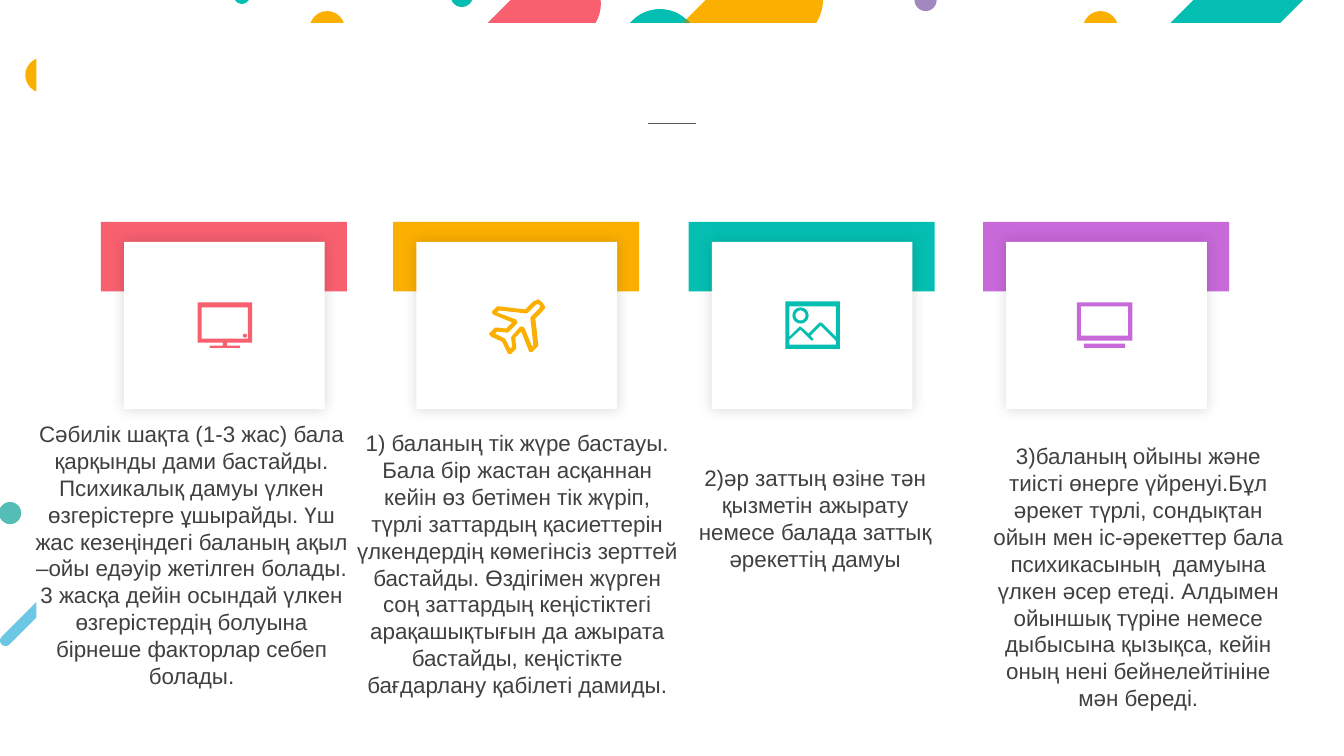
import math

import pptx
import pptx.dml.color
import pptx.enum.shapes
import pptx.enum.text
import pptx.oxml
import pptx.oxml.ns
import pptx.util

Inches = pptx.util.Inches
SHAPES = pptx.enum.shapes.MSO_SHAPE

RED, ORANGE, TEAL, VIOLET = "F86070", "FBAF01", "04BFB1", "C769D8"
WHITE = "FFFFFF"
TEXT_FORMAT = {"name": "Arial", "size": pptx.util.Pt(16)}

# centre x, centre y, overall span, thickness, colour
CAPSULES = [
    (5.98, 1.04, 1.9, 0.77, TEAL),
    (12.38, 0, 1.9, 0.77, TEAL),
    (5.01, 0.6, 1.9, 0.77, RED),
    (6.67, 1, 2.99, 0.95, ORANGE),
    (0.74, 5.67, 1.48, 0.11, "6CC7E5"),
]
OVERLAP = [(6.81, 0.19), (6.6, 0.4), (6.9, 0.4), (6.85, 0.23)]
# left, top, diameter, colour
DOTS = [
    (9.07, -0.11, 0.22, "A188BE"),
    (4.47, -0.15, 0.22, TEAL),
    (-0.01, 4.98, 0.22, "54BDB5"),
    (3.07, 0.11, 0.35, ORANGE),
    (0.25, 0.57, 0.35, ORANGE),
    (10.74, 0.11, 0.35, ORANGE),
    (2.32, -0.12, 0.16, TEAL),
]


def rectangle(left, top, width, height):
    right, bottom = left + width, top + height
    return [(left, top), (right, top), (right, bottom), (left, bottom)]


def circle(x, y, radius, steps=24):
    angles = [2 * math.pi * step / steps for step in range(steps)]
    return [(x + radius * math.cos(a), y + radius * math.sin(a)) for a in angles]


# Each icon is a list of closed contours in inches; an inner contour is a hole.
MONITOR = [
    rectangle(0.01, 0.06, 0.54, 0.4), rectangle(0.05, 0.11, 0.46, 0.31),
    circle(0.48, 0.39, 0.02), rectangle(0.26, 0.46, 0.04, 0.03),
    rectangle(0.13, 0.49, 0.3, 0.02),
]
PLANE = [
    [(0.44, 0.05), (0.49, 0.03), (0.53, 0.06), (0.56, 0.11), (0.53, 0.15),
     (0.46, 0.22), (0.49, 0.49), (0.48, 0.5), (0.43, 0.55), (0.4, 0.55),
     (0.32, 0.35), (0.26, 0.41), (0.27, 0.5), (0.27, 0.52), (0.22, 0.57),
     (0.19, 0.57), (0.13, 0.45), (0.02, 0.4), (0, 0.37), (0.01, 0.36),
     (0.06, 0.31), (0.08, 0.31), (0.17, 0.32), (0.23, 0.26), (0.04, 0.18),
     (0.03, 0.16), (0.03, 0.15), (0.08, 0.1), (0.1, 0.1), (0.36, 0.13)],
    [(0.47, 0.08), (0.39, 0.16), (0.37, 0.17), (0.1, 0.14), (0.08, 0.16),
     (0.27, 0.23), (0.28, 0.25), (0.28, 0.27), (0.19, 0.36), (0.18, 0.36),
     (0.08, 0.35), (0.06, 0.37), (0.16, 0.42), (0.21, 0.52), (0.23, 0.5),
     (0.22, 0.41), (0.23, 0.39), (0.31, 0.3), (0.33, 0.3), (0.35, 0.31),
     (0.43, 0.5), (0.44, 0.48), (0.41, 0.21), (0.42, 0.2), (0.5, 0.12),
     (0.51, 0.09), (0.49, 0.08)],
]
LANDSCAPE = [
    rectangle(0.01, 0.05, 0.54, 0.47),
    [(0.05, 0.48), (0.05, 0.43), (0.16, 0.33), (0.27, 0.44), (0.29, 0.43),
     (0.26, 0.39), (0.36, 0.29), (0.51, 0.44), (0.51, 0.48)],
    [(0.51, 0.4), (0.37, 0.26), (0.35, 0.26), (0.24, 0.37), (0.16, 0.3),
     (0.15, 0.3), (0.05, 0.4), (0.05, 0.1), (0.51, 0.1)],
    circle(0.16, 0.19, 0.08), circle(0.16, 0.19, 0.05),
]
LAPTOP = [
    rectangle(-0.02, 0.06, 0.55, 0.38), rectangle(0.02, 0.1, 0.47, 0.29),
    rectangle(0.05, 0.47, 0.41, 0.04),
]

# left, colour, icon, text box, text
CARDS = [
    (1, RED, MONITOR, (0.25, 4.12, 3.3, 2.79),
     "Сәбилік шақта (1-3 жас) бала қарқынды дами бастайды. Психикалық дамуы үлкен "
     "өзгерістерге ұшырайды. Үш жас кезеңіндегі баланың ақыл –ойы едәуір жетілген "
     "болады. 3 жасқа дейін осындай үлкен өзгерістердің болуына бірнеше факторлар "
     "себеп болады."),
    (3.9, ORANGE, PLANE, (3.44, 4.21, 3.38, 2.79),
     "1) баланың тік жүре бастауы. Бала бір жастан асқаннан кейін өз бетімен тік "
     "жүріп, түрлі заттардың қасиеттерін үлкендердің көмегінсіз зерттей бастайды. "
     "Өздігімен жүрген соң заттардың кеңістіктегі арақашықтығын да ажырата "
     "бастайды, кеңістікте бағдарлану қабілеті дамиды."),
    (6.83, TEAL, LANDSCAPE, (6.76, 4.56, 2.65, 1.18),
     "2)әр заттың өзіне тән қызметін ажырату немесе балада заттық әрекеттің дамуы"),
    (9.75, VIOLET, LAPTOP, (9.75, 4.34, 3.08, 2.79),
     "3)баланың ойыны және тиісті өнерге үйренуі.Бұл әрекет түрлі, сондықтан ойын "
     "мен іс-әрекеттер бала психикасының  дамуына үлкен әсер етеді. Алдымен ойыншық "
     "түріне немесе дыбысына қызықса, кейін оның нені бейнелейтініне мән береді."),
]


def color(hex_text):
    return pptx.dml.color.RGBColor.from_string(hex_text)


def paint(shape, fill):
    shape.shadow.inherit = False
    shape.fill.solid()
    shape.fill.fore_color.rgb = color(fill)
    shape.line.fill.background()
    return shape


def add_preset(page, kind, box, fill):
    return paint(page.shapes.add_shape(kind, *map(Inches, box)), fill)


def add_outline(page, contours, left, top, fill):
    """Draw closed contours, given in inches, as one shape from left and top."""
    contours = [[(round(x * 1000), round(y * 1000)) for x, y in contour]
                for contour in contours]
    builder = page.shapes.build_freeform(*contours[0][0], scale=Inches(1) / 1000)
    for index, contour in enumerate(contours):
        if index:
            builder.move_to(*contour[0])
        builder.add_line_segments(contour[1:], close=True)
    return paint(builder.convert_to_shape(Inches(left), Inches(top)), fill)


def add_capsule(page, x, y, span, thickness, fill):
    """Place a rounded bar rising to the right at 45 degrees."""
    length = (span - thickness) * math.sqrt(2) + thickness
    box = (x - length / 2, y - thickness / 2, length, thickness)
    bar = add_preset(page, SHAPES.ROUNDED_RECTANGLE, box, fill)
    bar.adjustments[0] = 0.5
    bar.rotation = -45


def add_soft_shadow(shape):
    effects = shape._element.spPr.find(pptx.oxml.ns.qn("a:effectLst"))
    effects.append(pptx.oxml.parse_xml(
        f'<a:outerShdw {pptx.oxml.ns.nsdecls("a")} blurRad="127000" dist="0" '
        'algn="ctr" rotWithShape="0"><a:srgbClr val="000000">'
        '<a:alpha val="15000"/></a:srgbClr></a:outerShdw>'))


def add_backdrop(page, panel):
    for capsule in CAPSULES:
        add_capsule(page, *capsule)
    add_outline(page, [OVERLAP], 0, 0, "649F53")
    for left, top, diameter, fill in DOTS:
        add_preset(page, SHAPES.OVAL, (left, top, diameter, diameter), fill)
    add_preset(page, SHAPES.RECTANGLE, panel, WHITE)


def add_heading_rule(page, left, top, width):
    rule = page.shapes.add_connector(
        pptx.enum.shapes.MSO_CONNECTOR.STRAIGHT,
        *map(Inches, (left, top, left + width, top)))
    rule.line.color.rgb = color("595959")
    rule.line.width = pptx.util.Pt(0.5)
    rule._element.spPr.append(
        pptx.oxml.parse_xml(f'<a:effectLst {pptx.oxml.ns.nsdecls("a")}/>'))


def add_card(page, left, top, fill, icon):
    add_preset(page, SHAPES.RECTANGLE, (left, top, 2.44, 0.69), fill)
    face = add_preset(page, SHAPES.RECTANGLE, (left + 0.23, top + 0.2, 1.99, 1.66), WHITE)
    add_soft_shadow(face)
    add_outline(page, icon, left + 0.95, top + 0.74, fill)


def add_caption(page, box, text):
    frame = page.shapes.add_textbox(*map(Inches, box)).text_frame
    frame.word_wrap = True
    frame.auto_size = pptx.enum.text.MSO_AUTO_SIZE.SHAPE_TO_FIT_TEXT
    para = frame.paragraphs[0]
    para.alignment = pptx.enum.text.PP_ALIGN.CENTER
    span = para.add_run()
    span.text = text
    for name, value in TEXT_FORMAT.items():
        setattr(span.font, name, value)
    span.font.color.rgb = color("404040")


def main():
    deck = pptx.Presentation()
    deck.slide_width, deck.slide_height = Inches(13.33), Inches(7.5)
    page = deck.slides.add_slide(deck.slide_layouts.get_by_name("Blank"))
    add_backdrop(page, (0.36, 0.23, 12.61, 7.31))
    add_heading_rule(page, 6.43, 1.22, 0.47)
    for left, fill, icon, caption_box, text in CARDS:
        add_card(page, left, 2.2, fill, icon)
        add_caption(page, caption_box, text)
    deck.save("out.pptx")


if __name__ == "__main__":
    main()
